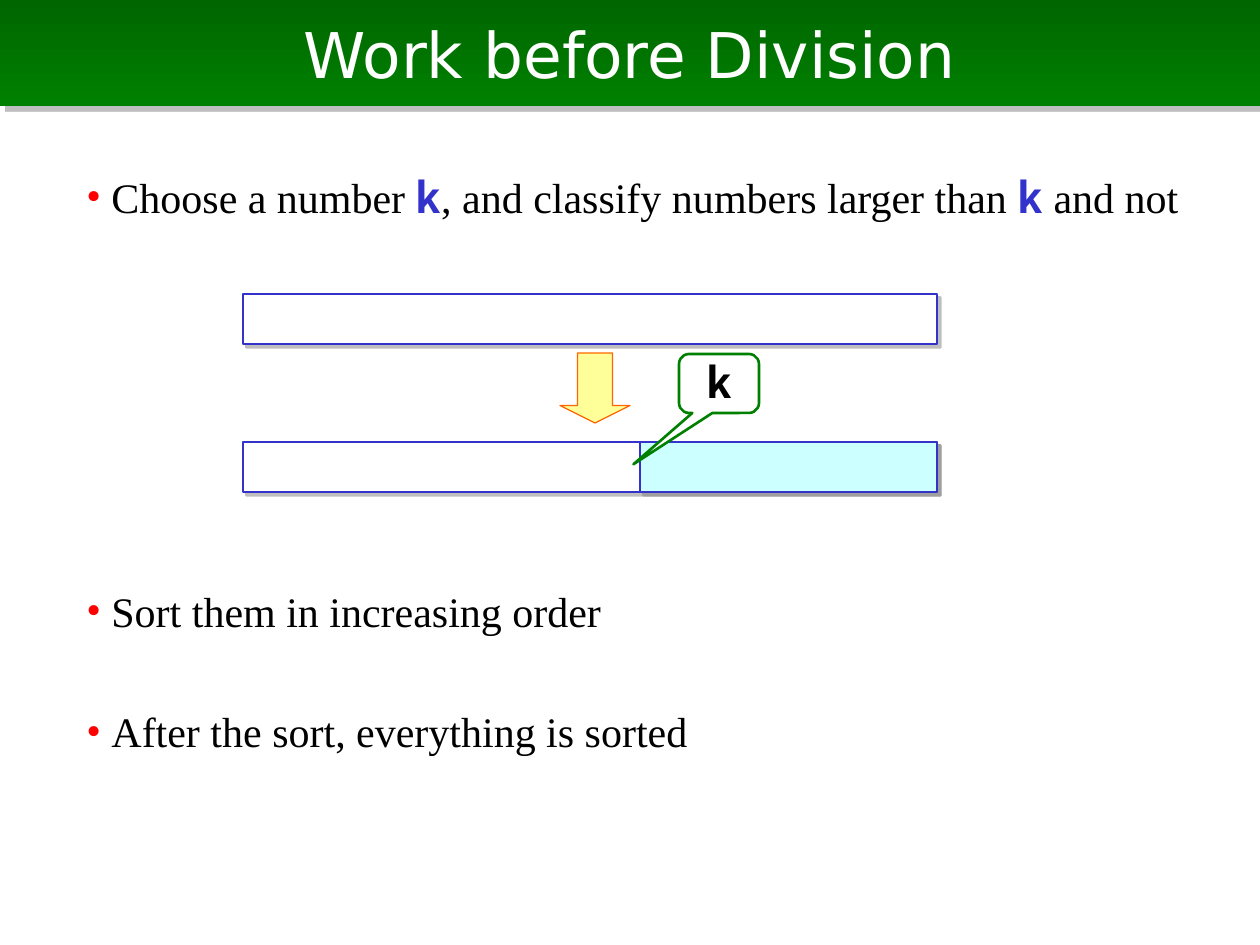
from lxml import etree
from pptx import Presentation, util as u
from pptx.dml.color import RGBColor
from pptx.enum import shapes, text
from pptx.oxml import ns

PX = 914400 // 126
SERIF, SANS, GOTHIC = "Times New Roman", "DejaVu Sans", "Noto Sans CJK JP"
WHITE = RGBColor(0xFF, 0xFF, 0xFF)
BLACK = RGBColor(0, 0, 0)
BLUE = RGBColor(0x33, 0x33, 0xCC)
CYAN = RGBColor(0xCC, 0xFF, 0xFF)
YELLOW = RGBColor(0xFF, 0xFF, 0x99)
ORANGE = RGBColor(0xFF, 0x66, 0)
DARK = RGBColor(0, 0x66, 0)
GREEN = RGBColor(0, 0x80, 0)
FORM = shapes.MSO_SHAPE

deck = Presentation()
deck.slide_width, deck.slide_height = 1260 * PX, 945 * PX
slide = deck.slides.add_slide(deck.slide_layouts[6])


def draw(form, box, fill, line=None, width=1.5):
    shape = slide.shapes.add_shape(form, *[n * PX for n in box])
    shape.shadow.inherit = False
    shape.fill.solid()
    shape.fill.fore_color.rgb = fill
    if line is None:
        shape.line.fill.background()
    else:
        shape.line.color.rgb = line
        shape.line.width = u.Pt(width)
    return shape


def shade(shape, dist):
    """Cast a half-clear grey shadow down to the right, dist points away."""
    effect = shape._element.spPr.find(ns.qn("a:effectLst"))
    outer = etree.SubElement(effect, ns.qn("a:outerShdw"), blurRad="0",
                             dist=str(u.Pt(dist)), dir="2700000",
                             algn="ctr", rotWithShape="0")
    grey = etree.SubElement(outer, ns.qn("a:srgbClr"), val="808080")
    etree.SubElement(grey, ns.qn("a:alpha"), val="50000")


# Title band
title = draw(FORM.RECTANGLE, (0, 0, 1260, 106), DARK)
title.fill.gradient()
title.fill.gradient_angle = 270
for stop, color, place in zip(title.fill.gradient_stops, (DARK, GREEN), (0, 1)):
    stop.color.rgb = color
    stop.position = place
shade(title, 4.2)
head = title.text_frame.paragraphs[0]
head.text = "Work before Division"
head.alignment = text.PP_ALIGN.CENTER
head.font.name, head.font.size = SANS, u.Pt(36)
head.font.color.rgb = WHITE

# Bullet points: space before in px, then the pieces of text
points = [
    (0, ["Choose a number ", "k", ", and classify numbers larger than ", "k",
         " and not"]),
    (364, ["Sort them in increasing order"]),
    (70, ["After the sort, everything is sorted"]),
]
body = slide.shapes.add_textbox(74 * PX, 165 * PX, 1132 * PX, 694 * PX).text_frame
body.word_wrap = True
for i, (gap, parts) in enumerate(points):
    para = body.add_paragraph() if i else body.paragraphs[0]
    para.space_before = gap * PX
    para.font.size = u.Pt(24)
    for part in parts:
        run = para.add_run()
        run.text = part
        key = part == "k"
        run.font.name = GOTHIC if key else SERIF
        run.font.bold = key
        run.font.color.rgb = BLUE if key else BLACK
    props = para._p.get_or_add_pPr()
    props.set("marL", str(25 * PX))
    props.set("indent", str(-25 * PX))
    tint = etree.Element(ns.qn("a:buClr"))
    etree.SubElement(tint, ns.qn("a:srgbClr"), val="FF0000")
    face = etree.Element(ns.qn("a:buFont"), typeface=SERIF)
    mark = etree.Element(ns.qn("a:buChar"), char="•")
    spot = props.index(props.find(ns.qn("a:spcBef"))) + 1
    props[spot:spot] = [tint, face, mark]

# Array before and after the split at k
for left, top, width, fill in [(243, 294, 694, WHITE), (243, 442, 694, WHITE),
                               (640, 442, 297, CYAN)]:
    shade(draw(FORM.RECTANGLE, (left, top, width, 50), fill, BLUE), 2.8)

arrow = draw(FORM.DOWN_ARROW, (560, 353, 70, 70), YELLOW, ORANGE, 0.75)
arrow.adjustments[0], arrow.adjustments[1] = 0.5, 0.25

pivot = draw(FORM.ROUNDED_RECTANGULAR_CALLOUT, (679, 354, 80, 59), WHITE, GREEN)
for i, value in enumerate((-1.07, 1.37, 0.17)):
    pivot.adjustments[i] = value
frame = pivot.text_frame
frame.margin_top = 0
frame.vertical_anchor = text.MSO_ANCHOR.TOP
label = frame.paragraphs[0]
label.text = "k"
label.alignment = text.PP_ALIGN.CENTER
label.font.name, label.font.size, label.font.bold = GOTHIC, u.Pt(24), True
label.font.color.rgb = BLACK

deck.save("out.pptx")
